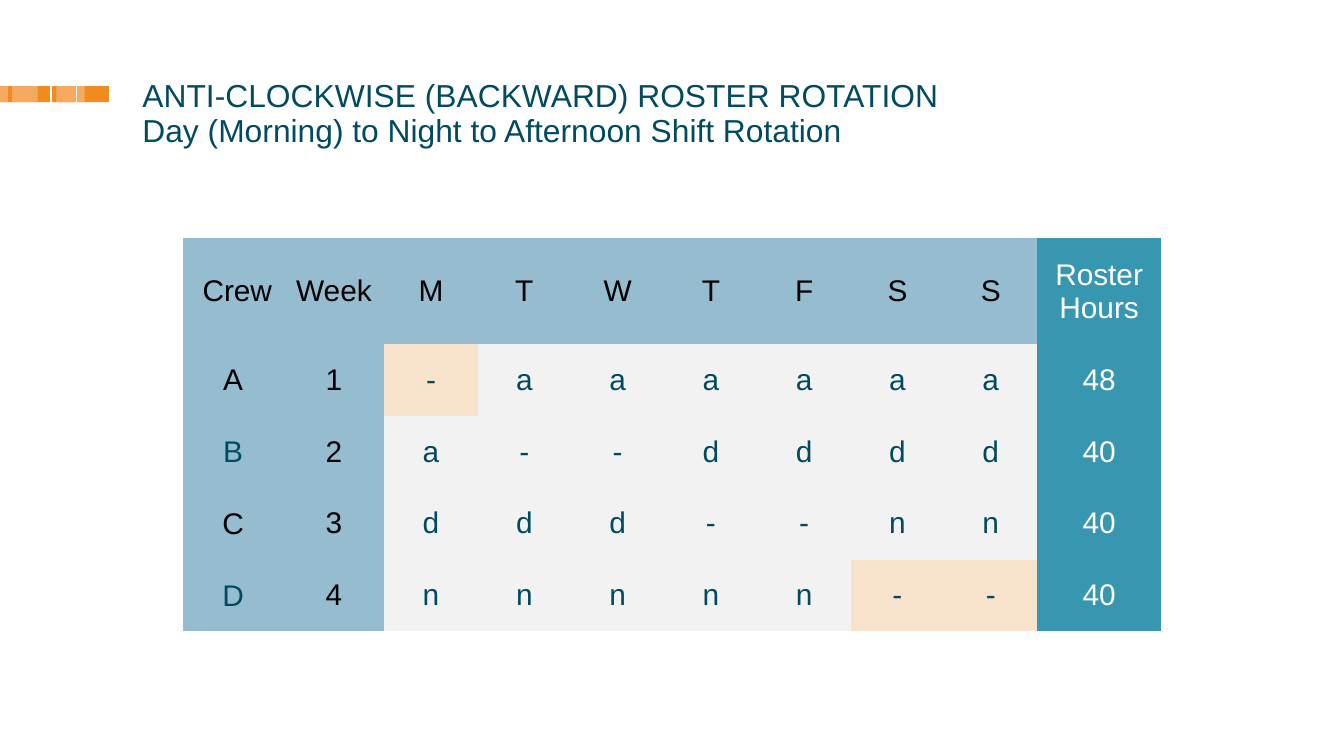
from dataclasses import dataclass

from lxml import etree
from pptx import Presentation
from pptx.dml.color import RGBColor
from pptx.enum import shapes, text
from pptx.oxml import ns
from pptx.util import Inches, Pt


@dataclass(frozen=True)
class Theme:
    """Colours, font and type sizes of the slide."""
    navy: str = "004B60"
    black: str = "000000"
    white: str = "FFFFFF"
    orange: str = "F08B1D"
    peach: str = "F6AA5F"
    blue: str = "95BCCF"
    teal: str = "3797B1"
    grey: str = "F2F2F2"
    cream: str = "F7E2CB"
    font: str = "Arial"
    head: int = 17
    body: int = 16


THEME = Theme()
PLAIN = "{2D5ABB26-0587-4C30-8999-92F81FD0307C}"
HEADS = " Crew,Week,M,T,W,T,F,S,S,Roster Hours".split(",")
CREWS = [("A", "-aaaaaa", 48), ("B", "a--dddd", 40),
         ("C", "ddd--nn", 40), ("D", "nnnnn--", 40)]
SHADED = "AD"
TINTED = "BD"


def paint(fill, tone):
    """Give a fill one solid colour."""
    fill.solid()
    fill.fore_color.rgb = RGBColor.from_string(tone)


def style(para, size, tone):
    """Set the font of every run in a paragraph."""
    for run in para.runs:
        run.font.name = THEME.font
        run.font.size = Pt(size)
        run.font.color.rgb = RGBColor.from_string(tone)


def add_stripe(slide, left, top, width, height):
    """Draw the orange stripe with its light bands and white gaps."""
    bands = [(0, width, THEME.orange), (0.42, 0.21, THEME.peach),
             (0.09, 0.19, THEME.peach), (0, 0.06, THEME.peach)]
    for shift, span, tone in bands:
        band = slide.shapes.add_shape(
            shapes.MSO_SHAPE.RECTANGLE, Inches(left + shift), Inches(top),
            Inches(span), Inches(height))
        band.shadow.inherit = False
        paint(band.fill, tone)
        band.line.fill.background()
    for shift in (0.38, 0.57):
        x = Inches(left + shift)
        gap = slide.shapes.add_connector(
            shapes.MSO_CONNECTOR.STRAIGHT, x, Inches(top), x,
            Inches(top + height))
        gap.line.width = Pt(0.63)
        gap.line.color.rgb = RGBColor.from_string(THEME.white)
        etree.SubElement(gap._element.spPr, ns.qn("a:effectLst"))


def set_line(shape, words, left, top, width, height):
    """Place a shape and fill it with one heading line."""
    shape.left, shape.top = Inches(left), Inches(top)
    shape.width, shape.height = Inches(width), Inches(height)
    frame = shape.text_frame
    frame.text = words
    frame.word_wrap = True
    frame.auto_size = text.MSO_AUTO_SIZE.NONE
    frame.vertical_anchor = text.MSO_ANCHOR.TOP
    frame.margin_left = frame.margin_right = 0
    frame.margin_top = frame.margin_bottom = 0
    para = frame.paragraphs[0]
    para.alignment = text.PP_ALIGN.LEFT
    para.line_spacing = 0.85
    para.space_after = Pt(12)
    style(para, THEME.head, THEME.navy)


def add_heads(slide, left, top, width, height):
    """Place the title and the line below it."""
    set_line(slide.shapes.title, "ANTI-CLOCKWISE (BACKWARD) ROSTER ROTATION",
             left, top, width, height)
    set_line(slide.shapes.add_textbox(0, 0, 0, 0),
             "Day (Morning) to Night to Afternoon Shift Rotation",
             left, top + 0.26, width, height)


def pick_tones(row, col, crew, mark):
    """Return the fill and text colours of a roster cell."""
    if col == len(HEADS) - 1:
        return THEME.teal, THEME.white
    if row == 0 or col < 2:
        navy = col == 0 and crew in TINTED
        return THEME.blue, THEME.navy if navy else THEME.black
    rest = mark == "-" and crew in SHADED
    return THEME.cream if rest else THEME.grey, THEME.navy


def add_roster(slide, left, top, width, height):
    """Build the roster table of crews, weeks, shifts and hours."""
    rows = [HEADS] + [[crew, str(week), *days, str(hours)] for
                      week, (crew, days, hours) in enumerate(CREWS, 1)]
    table = slide.shapes.add_table(
        len(rows), len(HEADS), Inches(left), Inches(top),
        Inches(width), Inches(height)).table
    table._tbl.tblPr.find(ns.qn("a:tableStyleId")).text = PLAIN
    table.horz_banding = False
    side, last, first = 0.75, 0.92, 0.79
    day = (width - 2 * side - last) / 7
    for col, span in zip(table.columns, [side] * 2 + [day] * 7 + [last]):
        col.width = Inches(span)
    rest = (height - first) / len(CREWS)
    for row, span in zip(table.rows, [first] + [rest] * len(CREWS)):
        row.height = Inches(span)
    for r, row in enumerate(rows):
        for c, mark in enumerate(row):
            cell = table.cell(r, c)
            cell.text = mark
            cell.vertical_anchor = text.MSO_ANCHOR.MIDDLE
            if r == 0 or c == 0:
                cell.margin_left = cell.margin_right = Inches(0.01)
                cell.margin_top, cell.margin_bottom = Inches(0.01), 0
            fill, tone = pick_tones(r, c, row[0], mark)
            paint(cell.fill, fill)
            para = cell.text_frame.paragraphs[0]
            para.alignment = text.PP_ALIGN.CENTER
            style(para, THEME.body, tone)


def main():
    """Build and save the deck."""
    deck = Presentation()
    deck.slide_width = Inches(10)
    deck.slide_height = deck.slide_width * 9 // 16
    slide = deck.slides.add_slide(deck.slide_layouts[5])
    paint(slide.background.fill, THEME.white)
    add_stripe(slide, 0, 0.64, 0.81, 0.12)
    add_heads(slide, 1.06, 0.61, 8.27, 0.5)
    add_roster(slide, 1.36, 1.77, 7.28, 2.93)
    deck.save("out.pptx")


if __name__ == "__main__":
    main()
